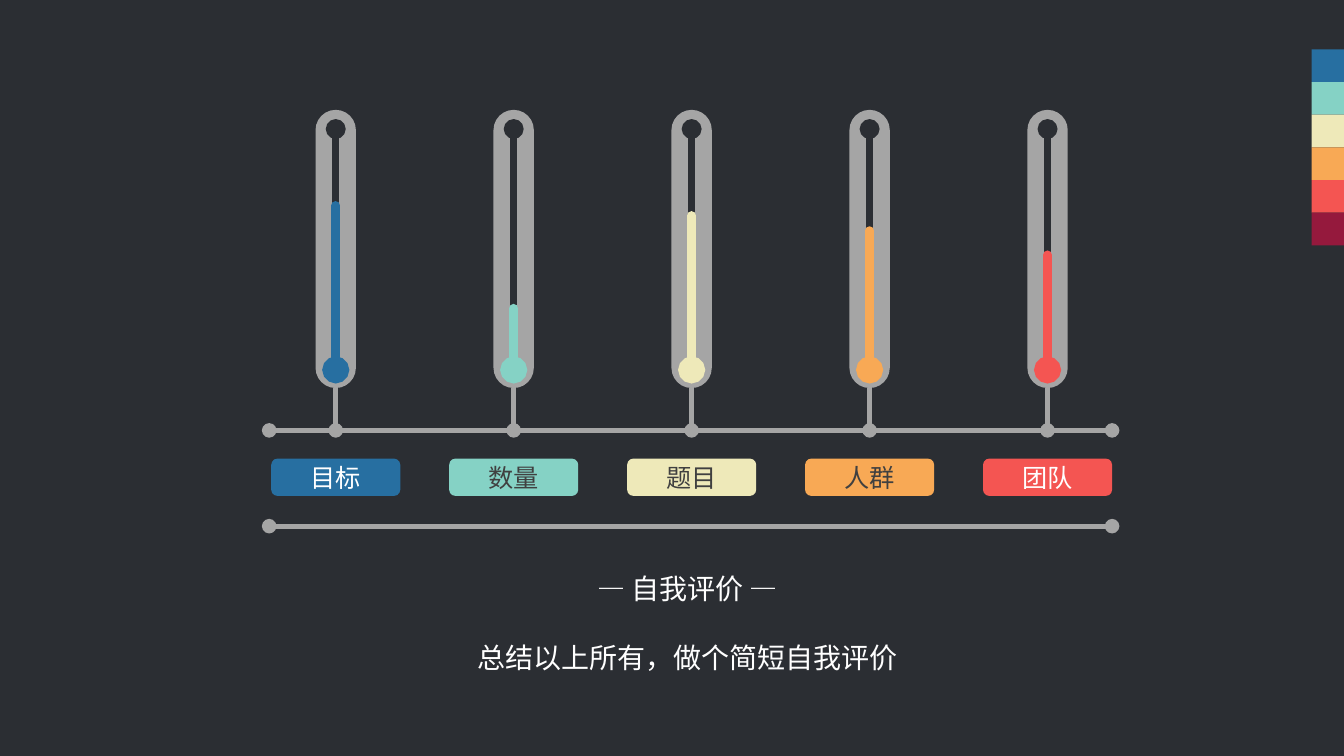
from dataclasses import dataclass

from lxml import etree
from pptx import Presentation
from pptx import util as u
from pptx.dml.color import RGBColor
from pptx.enum import shapes, text
from pptx.oxml import ns

FONT = "Noto Sans CJK SC"
HUES = {
    "back": "2B2E33", "gray": "A5A5A5", "white": "FFFFFF", "dark": "404040",
    "blue": "276FA1", "mint": "85D2C5", "cream": "EEE9B9",
    "orange": "F8A955", "red": "F45552", "wine": "95193D",
}
SWATCH = ["blue", "mint", "cream", "orange", "red", "wine"]
STEP = 0.324            # swatch side
FIRST, LAST = 3.33, 10.39   # centres of the outer gauges
LEFT, RIGHT = 2.67, 11.03   # ends of the rails
TOP, BULB = 1.28, 3.67      # ends of a gauge tube
FOOT, RAIL, BASE = 3.85, 4.27, 5.22


@dataclass
class Gauge:
    label: str
    hue: str
    ink: str
    level: float    # top of the coloured column


GAUGES = [
    Gauge("目标", "blue", "white", 2.04),
    Gauge("数量", "mint", "dark", 3.06),
    Gauge("题目", "cream", "dark", 2.14),
    Gauge("人群", "orange", "dark", 2.29),
    Gauge("团队", "red", "white", 2.53),
]


def color(name: str) -> RGBColor:
    return RGBColor.from_string(HUES[name])


def assign(item, values: dict) -> None:
    for key, value in values.items():
        setattr(item, key, value)


def block(slide, kind, x: float, y: float, w: float, h: float, hue: str):
    shape = slide.shapes.add_shape(
        kind, u.Inches(x), u.Inches(y), u.Inches(w), u.Inches(h))
    shape.shadow.inherit = False
    shape.fill.solid()
    shape.fill.fore_color.rgb = color(hue)
    shape.line.fill.background()
    return shape


def line(slide, start: tuple, end: tuple, hue: str, width: float,
         head: bool = False, cap: str = "flat") -> None:
    link = slide.shapes.add_connector(
        shapes.MSO_CONNECTOR.STRAIGHT, *map(u.Inches, start + end))
    link.line.color.rgb = color(hue)
    link.line.width = u.Pt(width)
    # Round dots at the ends, no shadow
    props = link._element.spPr
    stroke = props.find(ns.qn("a:ln"))
    stroke.set("cap", cap)
    for tag in (["a:headEnd"] if head else []) + ["a:tailEnd"]:
        etree.SubElement(stroke, ns.qn(tag), type="oval")
    etree.SubElement(props, ns.qn("a:effectLst"))


def write(para, words: str, size: float, ink: str) -> None:
    para.alignment = text.PP_ALIGN.CENTER
    run = para.add_run()
    run.text = words
    assign(run.font, {"name": FONT, "size": u.Pt(size)})
    run.font.color.rgb = color(ink)
    etree.SubElement(run._r.get_or_add_rPr(), ns.qn("a:ea"), typeface=FONT)


def gauge(slide, item: Gauge, x: float) -> None:
    kind = shapes.MSO_SHAPE.ROUNDED_RECTANGLE
    # Case, tube and column
    case = block(slide, kind, x - 0.2, 1.09, 0.4, 2.76, "gray")
    case.adjustments[0] = 0.5
    line(slide, (x, TOP), (x, BULB), "back", 4.75, head=True)
    line(slide, (x, item.level), (x, BULB), item.hue, 6.5, cap="rnd")
    # Stem down to the rail
    line(slide, (x, FOOT), (x, RAIL), "gray", 3.5)
    # Label
    tag = block(slide, kind, x - 0.64, 4.55, 1.28, 0.37, item.hue)
    tag.text_frame.vertical_anchor = text.MSO_ANCHOR.MIDDLE
    write(tag.text_frame.paragraphs[0], item.label, 18, item.ink)


def note(slide) -> None:
    box = slide.shapes.add_textbox(
        u.Inches(2.68), u.Inches(5.68), u.Inches(8.28), u.Inches(1.24))
    frame = box.text_frame
    frame.word_wrap = True
    title, body = frame.paragraphs[0], frame.add_paragraph()
    assign(title, {"line_spacing": u.Pt(20)})
    assign(body, {"line_spacing": 1.2, "space_before": u.Pt(20)})
    write(title, "— 自我评价 —", 20, "white")
    write(body, "总结以上所有，做个简短自我评价", 20, "white")


def main() -> None:
    deck = Presentation()
    assign(deck, {"slide_width": u.Inches(13.33),
                  "slide_height": u.Inches(7.5)})
    slide = deck.slides.add_slide(deck.slide_layouts[6])
    slide.background.fill.solid()
    slide.background.fill.fore_color.rgb = color("back")

    # Colour strip at the right edge
    for i, hue in enumerate(SWATCH):
        block(slide, shapes.MSO_SHAPE.RECTANGLE,
              13.01, 0.49 + i * STEP, 0.32, STEP, hue)

    # Rails
    for y in (RAIL, BASE):
        line(slide, (LEFT, y), (RIGHT, y), "gray", 3.5, head=True)

    # Gauges with labels
    gap = (LAST - FIRST) / (len(GAUGES) - 1)
    for i, item in enumerate(GAUGES):
        gauge(slide, item, FIRST + i * gap)

    # Closing text
    note(slide)
    deck.save("out.pptx")


if __name__ == "__main__":
    main()
